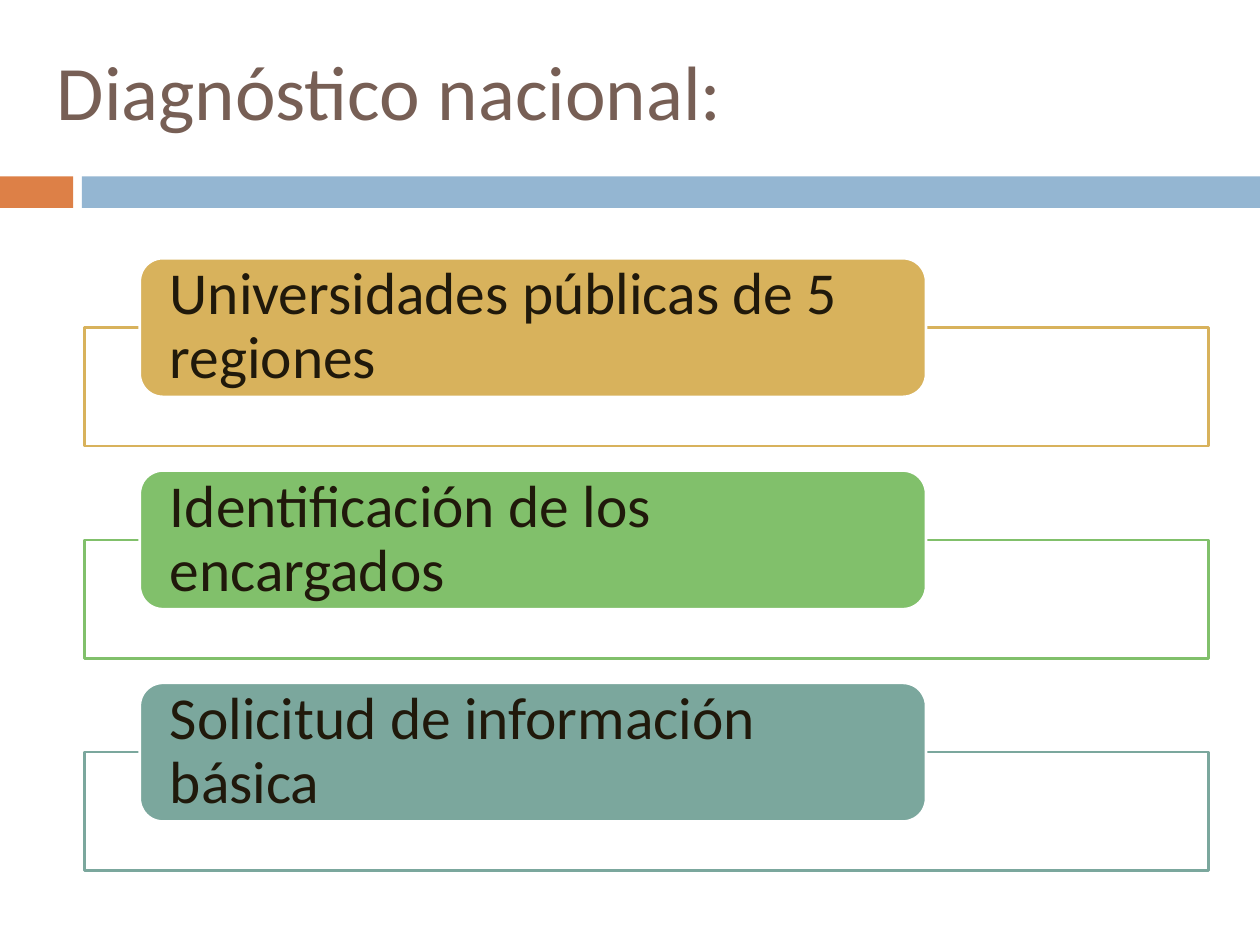
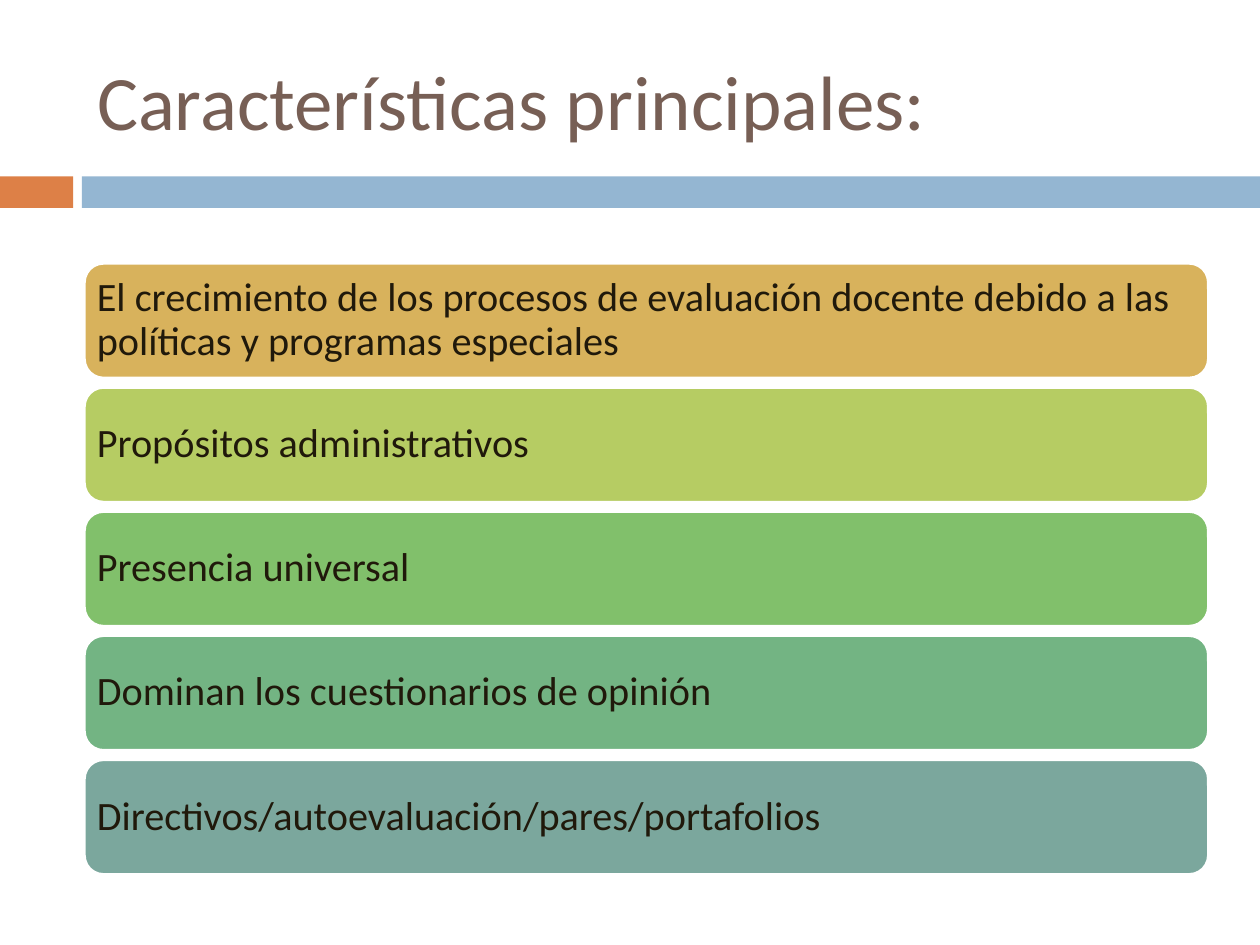
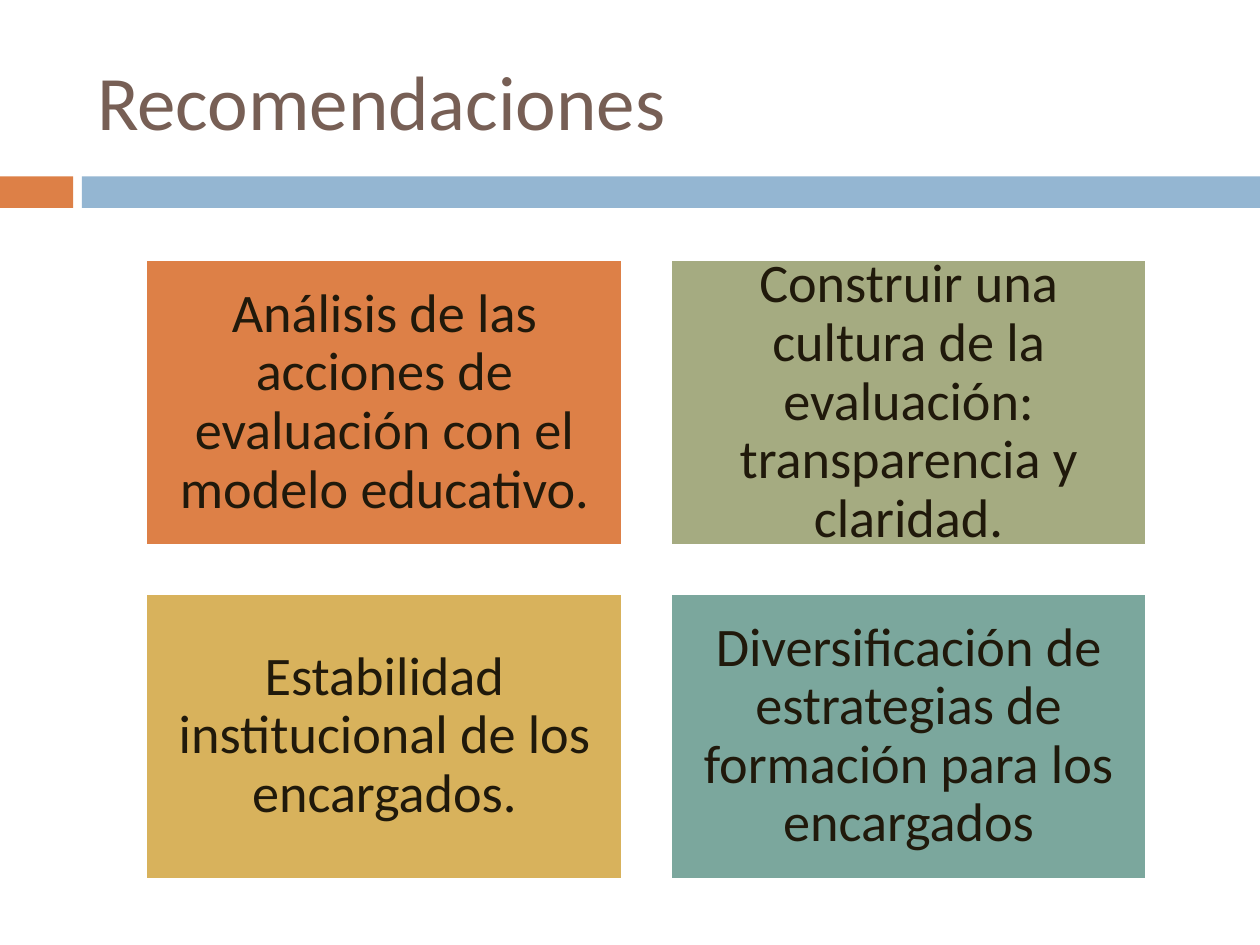
from dataclasses import dataclass

from lxml import etree
from pptx import Presentation
from pptx.dml.color import RGBColor
from pptx.enum.shapes import MSO_SHAPE
from pptx.enum.text import MSO_ANCHOR, MSO_AUTO_SIZE, PP_ALIGN
from pptx.oxml.ns import qn
from pptx.util import Inches, Pt

RECT, ROUND = MSO_SHAPE.RECTANGLE, MSO_SHAPE.ROUNDED_RECTANGLE
MIDDLE = MSO_ANCHOR.MIDDLE
LEFT, CENTER = PP_ALIGN.LEFT, PP_ALIGN.CENTER
NO_FIT = MSO_AUTO_SIZE.NONE
TITLE_ONLY = 5
ROUND_TEXT_INSET = 0.05  # share of the height a rounded box takes from its text


@dataclass(frozen=True)
class Theme:
    font: str = "Calibri"
    white: str = "FFFFFF"
    title: str = "775F55"
    ink: str = "20190B"
    orange: str = "DD8047"
    blue: str = "94B6D2"
    olive: str = "A5AB81"
    gold: str = "D8B25C"
    lime: str = "B6CC63"
    green: str = "81C06B"
    mint: str = "73B483"
    teal: str = "7BA79D"
    title_size: int = 44
    step_size: int = 34
    feature_size: int = 23
    advice_size: int = 31
    border: float = 1.5


THEME = Theme()
TITLE_AREA = (0.67, 0.25, 8.92, 1.08)


def rgb(code):
    return RGBColor.from_string(code)


def spaced(first, last, count):
    """Return count evenly spaced positions from first to last."""
    return [first + (last - first) * i / (count - 1) for i in range(count)]


class Deck:
    def __init__(self, theme):
        self.theme = theme
        self.prs = Presentation()
        self.prs.slide_width, self.prs.slide_height = Inches(10), Inches(7.5)
        self.layout = self.prs.slide_layouts[TITLE_ONLY]
        self.slide = None

    def add_slide(self, title, area=TITLE_AREA):
        is_first = self.slide is None
        self.slide = self.prs.slides.add_slide(self.layout)
        if is_first:
            self.add_layout_bands()
        heading = self.slide.shapes.title
        heading.left, heading.top, heading.width, heading.height = map(Inches, area)
        self.set_text(heading, title, self.theme.title_size, self.theme.title, LEFT)

    def add_layout_bands(self):
        """Move the two title bands to the layout that every slide uses."""
        bands = ((0, 0.58, self.theme.orange), (0.65, 9.35, self.theme.blue))
        for number, (left, width, color) in enumerate(bands, 100):
            band = self.box(RECT, (left, 1.4, width, 0.25), color)
            band.element.nvSpPr.cNvPr.set("id", str(number))
            self.layout.shapes.element.append(band.element)

    def box(self, kind, area, fill, line=None):
        shape = self.slide.shapes.add_shape(kind, *map(Inches, area))
        shape.shadow.inherit = False
        shape.fill.solid()
        shape.fill.fore_color.rgb = rgb(fill)
        if line:
            shape.line.color.rgb = rgb(line)
            shape.line.width = Pt(self.theme.border)
        else:
            shape.line.fill.background()
        return shape

    def frame(self, area, line):
        """Add a slightly transparent white box with a coloured border."""
        shape = self.box(RECT, area, self.theme.white, line)
        fill_color = shape.element.spPr.find(qn("a:solidFill")).find(qn("a:srgbClr"))
        etree.SubElement(fill_color, qn("a:alpha")).set("val", "90000")

    def card(self, kind, area, text, fill, size, pad, align=LEFT):
        """Add a filled box with text; pad is the (side, top) text margin."""
        shape = self.box(kind, area, fill, self.theme.white)
        inset = ROUND_TEXT_INSET * area[3] if kind == ROUND else 0
        side, top = (Inches(max(margin - inset, 0)) for margin in pad)
        text_frame = shape.text_frame
        text_frame.margin_left = text_frame.margin_right = side
        text_frame.margin_top = text_frame.margin_bottom = top
        self.set_text(shape, text, size, self.theme.ink, align, 0.9)

    def set_text(self, shape, text, size, color, align, line_spacing=None):
        text_frame = shape.text_frame
        text_frame.word_wrap = True
        text_frame.auto_size = NO_FIT
        text_frame.vertical_anchor = MIDDLE
        paragraph = text_frame.paragraphs[0]
        paragraph.alignment = align
        paragraph.line_spacing = line_spacing
        run = paragraph.add_run()
        run.text = text
        run.font.name = self.theme.font
        run.font.size = Pt(size)
        run.font.color.rgb = rgb(color)


def add_diagnosis(deck):
    deck.add_slide("Diagnóstico nacional:", (0.35, 0.13, 9, 1.17))
    steps = (
        ("Universidades públicas de 5 regiones", THEME.gold),
        ("Identificación de los encargados", THEME.green),
        ("Solicitud de información básica", THEME.teal),
    )
    for top, (step, color) in zip(spaced(2.05, 5.42, len(steps)), steps):
        deck.frame((0.67, top + 0.55, 8.92, 0.94), color)
        deck.card(ROUND, (1.11, top, 6.24, 1.1), step, color,
                  THEME.step_size, (0.24, 0))


def add_features(deck):
    deck.add_slide("Características principales:")
    features = (
        ("El crecimiento de los procesos de evaluación docente debido a las "
         "políticas y programas especiales", THEME.gold),
        ("Propósitos administrativos", THEME.lime),
        ("Presencia universal", THEME.green),
        ("Dominan los cuestionarios de opinión", THEME.mint),
        ("Directivos/autoevaluación/pares/portafolios", THEME.teal),
    )
    for top, (feature, color) in zip(spaced(2.09, 6.03, len(features)), features):
        deck.card(ROUND, (0.67, top, 8.92, 0.91), feature, color,
                  THEME.feature_size, (0.1, 0.1))


def add_recommendations(deck):
    deck.add_slide("Recomendaciones")
    recommendations = (
        ("Análisis de las acciones de evaluación con el modelo educativo.",
         THEME.orange),
        ("Construir una cultura de la evaluación: transparencia y claridad.",
         THEME.olive),
        ("Estabilidad institucional de los encargados.", THEME.gold),
        ("Diversificación de estrategias de formación para los encargados",
         THEME.teal),
    )
    for index, (advice, color) in enumerate(recommendations):
        row, column = divmod(index, 2)
        area = (1.16 + 4.16 * column, 2.06 + 2.65 * row, 3.78, 2.27)
        deck.card(RECT, area, advice, color, THEME.advice_size,
                  (0.13, 0.13), CENTER)


def main():
    deck = Deck(THEME)
    add_diagnosis(deck)
    add_features(deck)
    add_recommendations(deck)
    deck.prs.save("out.pptx")


if __name__ == "__main__":
    main()
